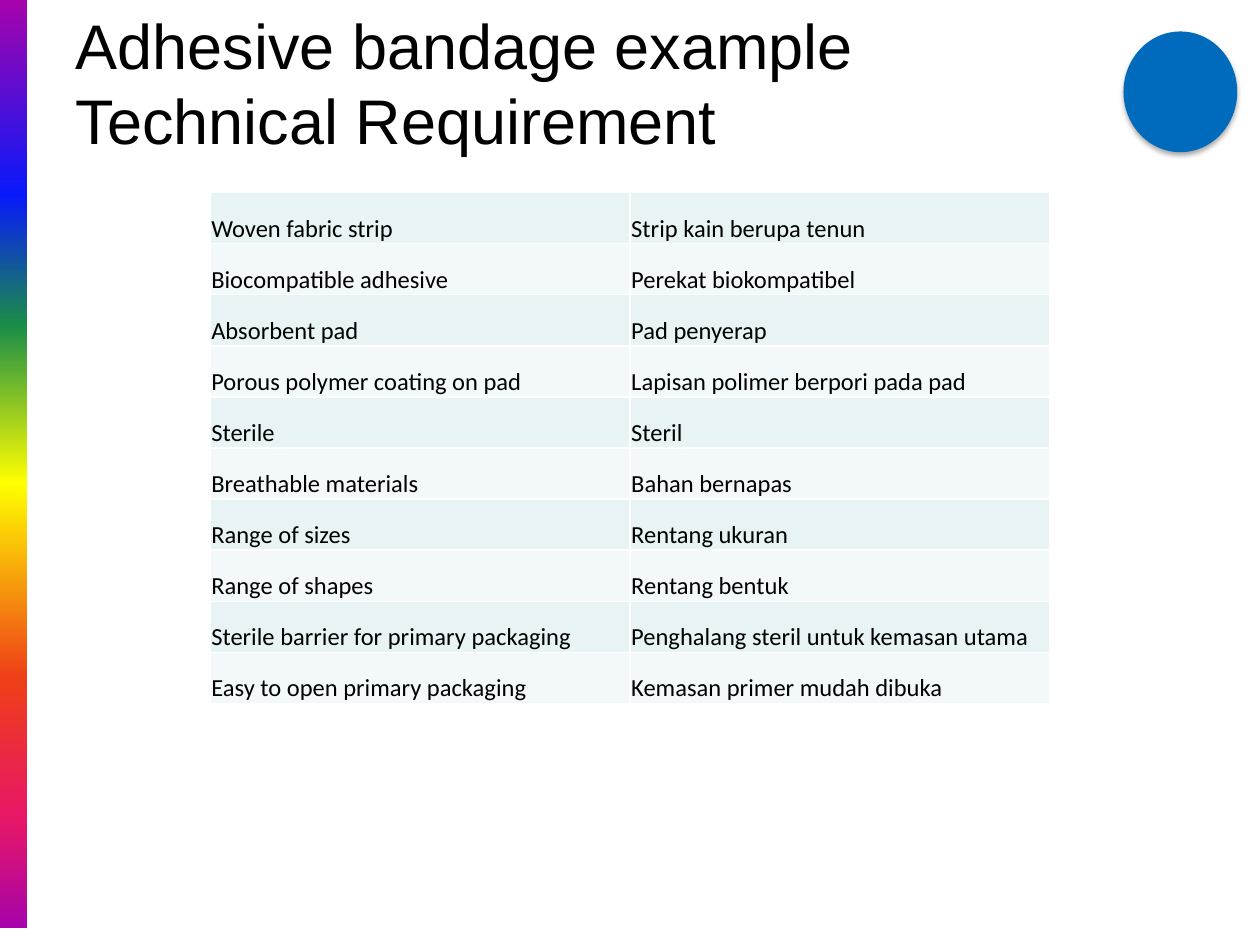
from lxml import etree
from pptx import Presentation
from pptx.dml.color import RGBColor
from pptx.enum.shapes import MSO_SHAPE
from pptx.enum.text import MSO_ANCHOR, PP_ALIGN
from pptx.oxml.ns import qn
from pptx.util import Pt

RECTANGLE = MSO_SHAPE.RECTANGLE
OVAL = MSO_SHAPE.OVAL
MIDDLE = MSO_ANCHOR.MIDDLE
BOTTOM = MSO_ANCHOR.BOTTOM
LEFT = PP_ALIGN.LEFT

BLACK = RGBColor(0x00, 0x00, 0x00)
WHITE = RGBColor(0xFF, 0xFF, 0xFF)
BLUE = RGBColor(0x00, 0x6B, 0xBC)
BANDS = (RGBColor(0xE7, 0xF3, 0xF4), RGBColor(0xF3, 0xF9, 0xFA))
PURPLE = RGBColor(0xA6, 0x03, 0xAB)
RAINBOW = (
    (0, PURPLE),
    (21, RGBColor(0x08, 0x19, 0xFB)),
    (35, RGBColor(0x1A, 0x8D, 0x48)),
    (52, RGBColor(0xFF, 0xFF, 0x00)),
    (73, RGBColor(0xEE, 0x3F, 0x17)),
    (88, RGBColor(0xE8, 0x17, 0x66)),
    (100, PURPLE),
)

TITLE_LINES = ("Adhesive bandage example", "Technical Requirement")
REQUIREMENTS = (
    ("Woven fabric strip", "Strip kain berupa tenun"),
    ("Biocompatible adhesive", "Perekat biokompatibel"),
    ("Absorbent pad", "Pad penyerap"),
    ("Porous polymer coating on pad", "Lapisan polimer berpori pada pad"),
    ("Sterile", "Steril"),
    ("Breathable materials", "Bahan bernapas"),
    ("Range of sizes", "Rentang ukuran"),
    ("Range of shapes", "Rentang bentuk"),
    ("Sterile barrier for primary packaging", "Penghalang steril untuk kemasan utama"),
    ("Easy to open primary packaging", "Kemasan primer mudah dibuka"),
)


def add_node(parent, tag, **attributes):
    node = etree.SubElement(parent, qn(tag))
    for name, value in attributes.items():
        node.set(name, str(value))
    return node


def write(para, text, *, size, font, color=BLACK):
    para.alignment = LEFT
    span = para.add_run()
    span.text = text
    span.font.size = Pt(size)
    span.font.name = font
    span.font.color.rgb = color


def add_plain_shape(page, kind, box):
    shape = page.shapes.add_shape(kind, *map(Pt, box))
    shape.shadow.inherit = False
    shape.line.fill.background()
    return shape


def add_rainbow_bar(page, box):
    bar = add_plain_shape(page, RECTANGLE, box)
    bar.fill.gradient()
    bar.fill.gradient_angle = 270
    stops = bar._element.spPr.find(".//" + qn("a:gsLst"))
    for stop in list(stops):
        stops.remove(stop)
    for percent, color in RAINBOW:
        stop = add_node(stops, "a:gs", pos=percent * 1000)
        add_node(stop, "a:srgbClr", val=color)


def place_title(page, box):
    title = page.shapes.title
    title.left, title.top, title.width, title.height = map(Pt, box)
    frame = title.text_frame
    frame.vertical_anchor = MIDDLE
    frame.word_wrap = True
    para = frame.paragraphs[0]
    for index, line in enumerate(TITLE_LINES):
        if index:
            para.add_line_break()
        write(para, line, size=36, font="Arial")


def add_badge(page, box):
    badge = add_plain_shape(page, OVAL, box)
    badge.fill.solid()
    badge.fill.fore_color.rgb = BLUE
    effects = badge._element.spPr.find(qn("a:effectLst"))
    shadow = add_node(effects, "a:outerShdw", blurRad=Pt(3.1), dist=Pt(1.8),
                      dir=5400000, rotWithShape=0)
    color = add_node(shadow, "a:srgbClr", val=BLACK)
    add_node(color, "a:alpha", val=35000)


def format_cell(cell, text, fill):
    cell.margin_left = cell.margin_right = cell.margin_top = Pt(0.75)
    cell.margin_bottom = 0
    cell.vertical_anchor = BOTTOM
    properties = cell._tc.get_or_add_tcPr()
    for side in ("a:lnL", "a:lnR", "a:lnT", "a:lnB"):
        border = add_node(properties, side, w=Pt(1))
        add_node(add_node(border, "a:solidFill"), "a:srgbClr", val=WHITE)
    cell.fill.solid()
    cell.fill.fore_color.rgb = fill
    write(cell.text_frame.paragraphs[0], text, size=14, font="Calibri")


def add_requirements(page, box):
    rows, columns = len(REQUIREMENTS), len(REQUIREMENTS[0])
    table = page.shapes.add_table(rows, columns, *map(Pt, box)).table
    table.first_row = False
    for row, texts in enumerate(REQUIREMENTS):
        for column, text in enumerate(texts):
            format_cell(table.cell(row, column), text, BANDS[row % 2])


def main():
    deck = Presentation()
    deck.slide_width, deck.slide_height = Pt(720), Pt(540)
    page = deck.slides.add_slide(deck.slide_layouts[5])
    add_rainbow_bar(page, (0, 0, 15.6, 530.6))
    place_title(page, (36, 21.6, 648, 50.4))
    add_badge(page, (642, 18, 65, 69))
    add_requirements(page, (120, 110, 480, 292))
    deck.save("out.pptx")


if __name__ == "__main__":
    main()
